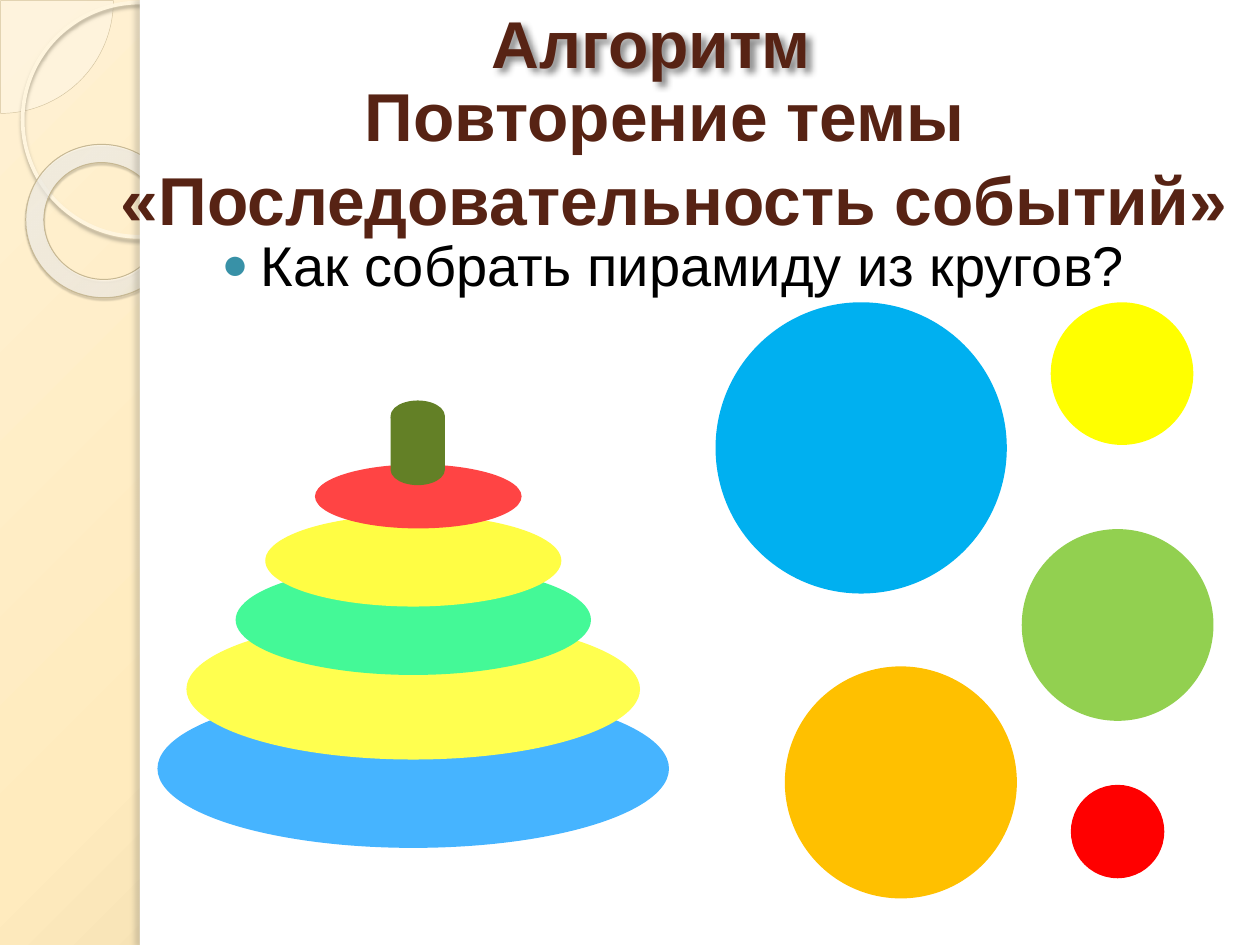
from lxml.etree import SubElement
from pptx import Presentation
from pptx.dml.color import RGBColor
from pptx.enum.shapes import MSO_SHAPE
from pptx.enum.text import MSO_ANCHOR, PP_ALIGN
from pptx.oxml.ns import qn
from pptx.util import Emu, Inches, Pt

COLUMNS, ROWS = 10, 7.5
BROWN = "572314"


def color(code):
    return RGBColor.from_string(code)


def add_node(parent, tag, **attributes):
    return SubElement(parent, qn(tag), {name: str(value) for name, value in attributes.items()})


def add_color(parent, code, opacity=100):
    node = add_node(parent, "a:srgbClr", val=code)
    if opacity < 100:
        add_node(node, "a:alpha", val=opacity * 1000)


def set_opacity(properties, opacity):
    add_node(properties.find(qn("a:solidFill"))[0], "a:alpha", val=opacity * 1000)


def set_radial_gradient(properties, stops, left, top):
    gradient = add_node(properties, "a:gradFill", rotWithShape=1)
    stop_list = add_node(gradient, "a:gsLst")
    for position, code, opacity in stops:
        add_color(add_node(stop_list, "a:gs", pos=position * 1000), code, opacity)
    radial = add_node(gradient, "a:path", path="circle")
    add_node(radial, "a:fillToRect", l=left * 1000, t=top * 1000,
             r=(100 - left) * 1000, b=(100 - top) * 1000)
    solid = properties.find(qn("a:solidFill"))
    properties.replace(solid, gradient)


def set_shadow(shape, code, opacity, blur, distance, angle):
    shape.shadow.inherit = False
    effects = shape._element.spPr.find(qn("a:effectLst"))
    shadow = add_node(effects, "a:outerShdw", blurRad=Pt(blur), dist=Pt(distance),
                      dir=angle * 60000, algn="tl", rotWithShape=0)
    add_color(shadow, code, opacity)


class Painter:
    font = "Arial"

    def __init__(self, deck):
        self.column = deck.slide_width / COLUMNS
        self.row = deck.slide_height / ROWS
        self.slide = deck.slides.add_slide(deck.slide_layouts[6])

    def place(self, left, top, width, height):
        return (Emu(round(left * self.column)), Emu(round(top * self.row)),
                Emu(round(width * self.column)), Emu(round(height * self.row)))

    def background(self, stops, left, top):
        self.slide.background.fill.solid()
        properties = self.slide.element.find(".//" + qn("p:bgPr"))
        set_radial_gradient(properties, stops, left, top)

    def shape(self, kind, area, fill=None, line=None, weight=3):
        shape = self.slide.shapes.add_shape(kind, *self.place(*area))
        shape.shadow.inherit = False
        if fill:
            shape.fill.solid()
            shape.fill.fore_color.rgb = color(fill)
        else:
            shape.fill.background()
        if line:
            shape.line.color.rgb = color(line)
            shape.line.width = Pt(weight)
        else:
            shape.line.fill.background()
        return shape

    def text(self, area, words, size, code, bold=False, align=PP_ALIGN.CENTER,
             anchor=MSO_ANCHOR.MIDDLE):
        box = self.slide.shapes.add_textbox(*self.place(*area))
        frame = box.text_frame
        frame.word_wrap = True
        frame.vertical_anchor = anchor
        frame.text = words
        para = frame.paragraphs[0]
        para.alignment = align
        for span in para.runs:
            span.font.name = self.font
            span.font.size = Pt(size)
            span.font.bold = bold
            span.font.color.rgb = color(code)
        return box

    def bullet(self, para, code, share, margin, hanging):
        properties = para._p.get_or_add_pPr()
        properties.set("marL", str(Inches(margin)))
        properties.set("indent", str(-Inches(hanging)))
        add_color(add_node(properties, "a:buClr"), code)
        add_node(properties, "a:buSzPct", val=share * 1000)
        add_node(properties, "a:buFont", typeface=self.font)
        add_node(properties, "a:buChar", char="●")


def draw_side_strip(painter):
    painter.background([(0, "FFF1D3", 100), (40, "FFEBBE", 100), (100, "C9B484", 100)], -24, -20)

    quarter = painter.shape(MSO_SHAPE.PIE, (-0.89, -0.89, 1.79, 1.79), "FEFAF4", "D3C39F", 0.25)
    quarter.adjustments[0] = 0
    quarter.adjustments[1] = 54.02
    set_opacity(quarter._element.spPr, 33)

    ring = painter.shape(MSO_SHAPE.OVAL, (0.18, 0.02, 1.86, 1.86), None, "FFF5DE", 2.15)
    set_shadow(ring, "B0A68F", 85, 2, 2, 90)

    donut = painter.shape(MSO_SHAPE.DONUT, (0.2, 1.15, 1.23, 1.21), "FFFCF6", "C7B893", 0.58)
    donut.adjustments[0] = 0.12
    donut.rotation = 38.6
    set_radial_gradient(donut._element.spPr,
                        [(0, "FFFCF6", 70), (70, "FFFEFB", 55), (100, "F0D28E", 60)], -408, -50)
    set_shadow(donut, "5A5444", 35, 1, 1.2, 75)

    painter.shape(MSO_SHAPE.RECTANGLE, (1.11, 0, 8.89, ROWS), "FFFFFF")
    edge = painter.shape(MSO_SHAPE.RECTANGLE, (1.11, 0, 0.08, ROWS), "FFFFFF")
    set_shadow(edge, "736F63", 25, 3, 3, 180)


def draw_headings(painter):
    title = painter.text((0.7, 0.76, 9.3, 0.94), "Повторение темы \v«Последовательность событий»",
                         38.7, BROWN, bold=True)
    title.text_frame.paragraphs[0].line_spacing = 1.03

    question = painter.text((1.57, 1.78, 8.2, 0.7), "Как собрать пирамиду из кругов?", 32, "000000",
                            align=PP_ALIGN.LEFT, anchor=MSO_ANCHOR.TOP)
    para = question.text_frame.paragraphs[0]
    para.space_before = Pt(6)
    painter.bullet(para, "3891A7", 80, 0.4, 0.31)

    topic = painter.text((1.12, 0.02, 8.1, 0.62), "Алгоритм", 37.8, BROWN, bold=True)
    set_shadow(topic, "000000", 45, 4, 3, 45)


def draw_pyramid(painter):
    flatness = 0.31
    tiers = [
        (3.28, 6.1, 4.06, "46B4FF"),
        (3.28, 5.47, 3.6, "FFFF4F"),
        (3.28, 4.92, 2.82, "44F997"),
        (3.28, 4.45, 2.35, "FFFD44"),
        (3.32, 3.94, 1.64, "FF4444"),
    ]
    for center, middle, width, fill in tiers:
        height = width * flatness
        painter.shape(MSO_SHAPE.OVAL, (center - width / 2, middle - height / 2, width, height), fill)
    painter.shape(MSO_SHAPE.FLOWCHART_MAGNETIC_DISK, (3.12, 3.2, 0.39, 0.63), "638026", "638026")


def draw_circles(painter):
    circles = [
        (5.7, 2.42, 2.27, "00B0F0"),
        (6.25, 5.31, 1.8, "FFC000"),
        (8.13, 4.22, 1.48, "92D050"),
        (8.36, 2.42, 1.09, "FFFF00"),
        (8.52, 6.25, 0.7, "FF0000"),
    ]
    for left, top, size, fill in circles:
        painter.shape(MSO_SHAPE.FLOWCHART_CONNECTOR, (left, top, size, size), fill, fill)


def main():
    deck = Presentation()
    deck.slide_width, deck.slide_height = Inches(10), Inches(7.5)
    painter = Painter(deck)
    draw_side_strip(painter)
    draw_headings(painter)
    draw_pyramid(painter)
    draw_circles(painter)
    deck.save("out.pptx")


if __name__ == "__main__":
    main()
